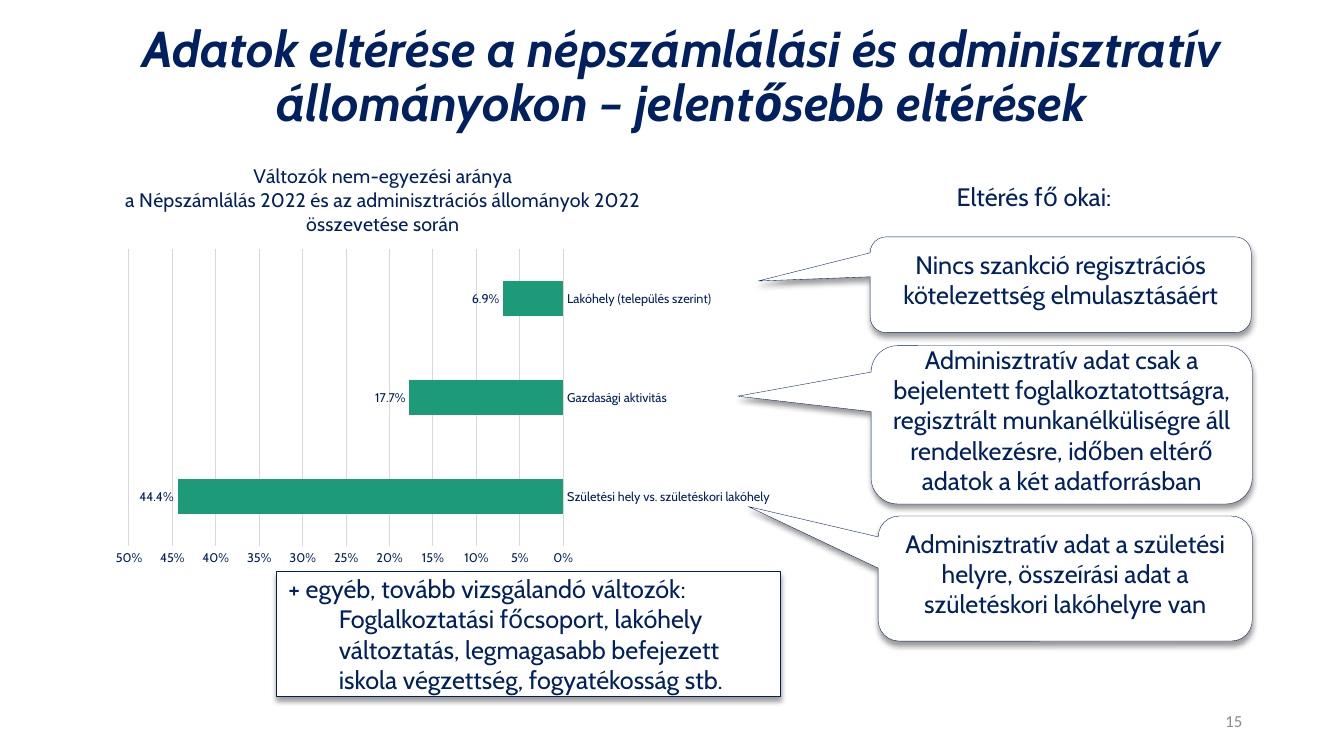
from dataclasses import dataclass

from lxml import etree
from pptx import Presentation
from pptx.chart.data import CategoryChartData
from pptx.dml.color import RGBColor
from pptx.enum.chart import XL_CHART_TYPE, XL_LABEL_POSITION, XL_TICK_MARK
from pptx.enum.shapes import MSO_SHAPE
from pptx.enum.text import MSO_ANCHOR, PP_ALIGN
from pptx.oxml import parse_xml
from pptx.oxml.ns import nsdecls, qn
from pptx.util import Pt

PX = 9144  # 100 px to the inch


@dataclass(frozen=True)
class Theme:
    navy: RGBColor = RGBColor(0x00, 0x20, 0x60)
    green: RGBColor = RGBColor(0x1D, 0x9A, 0x78)
    white: RGBColor = RGBColor(0xFF, 0xFF, 0xFF)
    grid: RGBColor = RGBColor(0xD9, 0xD9, 0xD9)
    gray: RGBColor = RGBColor(0x8C, 0x8C, 0x8C)
    font: str = "Cabin"
    number_font: str = "Calibri"
    title: int = 36
    body: int = 18
    chart_title: int = 14
    number: int = 12
    label: int = 9


theme = Theme()


def write(shape, lines, size, align, color=theme.navy, name=theme.font, insets=(10, 5, 10, 5)):
    """Fill a shape with one paragraph per line; insets are left, top, right, bottom."""
    frame = shape.text_frame
    frame.text = "\n".join(lines)
    frame.word_wrap = True
    frame.vertical_anchor = MSO_ANCHOR.MIDDLE
    frame.margin_left, frame.margin_top, frame.margin_right, frame.margin_bottom = (
        inset * PX for inset in insets)
    for paragraph in frame.paragraphs:
        paragraph.alignment = align
        for run in paragraph.runs:
            run.font.size = Pt(size)
            run.font.name = name
            run.font.color.rgb = color
    return frame


def add_card(slide, preset, box):
    """Add a white box with a thin navy outline and a soft shadow below it."""
    shape = slide.shapes.add_shape(preset, *(length * PX for length in box))
    shape.fill.solid()
    shape.fill.fore_color.rgb = theme.white
    shape.line.color.rgb = theme.navy
    shape.line.width = Pt(0.25)
    shape.shadow.inherit = False
    shape._element.spPr.find(qn("a:effectLst")).append(parse_xml(
        f'<a:outerShdw {nsdecls("a")} blurRad="{Pt(4)}" dist="{Pt(3)}" dir="5400000" rotWithShape="0">'
        '<a:srgbClr val="000000"><a:alpha val="40000"/></a:srgbClr></a:outerShdw>'))
    return shape


presentation = Presentation()
presentation.slide_width = 1333 * PX
presentation.slide_height = 750 * PX
slide = presentation.slides.add_slide(presentation.slide_layouts[6])

# Title and slide number
title = slide.shapes.add_textbox(101 * PX, 18 * PX, 1150 * PX, 119 * PX)
title_frame = write(
    title,
    ["Adatok eltérése a népszámlálási és adminisztratív állományokon – jelentősebb eltérések"],
    theme.title, PP_ALIGN.CENTER)
title_frame.paragraphs[0].line_spacing = 0.9
title_font = title_frame.paragraphs[0].runs[0].font
title_font.bold = title_font.italic = True

slide_number = slide.shapes.add_textbox(942 * PX, 695 * PX, 300 * PX, 40 * PX)
write(slide_number, ["15"], theme.number, PP_ALIGN.RIGHT, theme.gray, theme.number_font)

# Callouts with the reasons
callouts = [
    ((871, 512, 371, 124), (-0.847, -0.576),
     "Adminisztratív adat a születési helyre, összeírási adat a születéskori lakóhelyre van"),
    ((864, 343, 378, 157), (-0.85, -0.181),
     "Adminisztratív adat csak a bejelentett foglalkoztatottságra, regisztrált munkanélküliségre "
     "áll rendelkezésre, időben eltérő adatok a két adatforrásban"),
    ((863, 235, 378, 95), (-0.794, -0.039),
     "Nincs szankció regisztrációs kötelezettség elmulasztásáért"),
]
for box, tip, reason in callouts:
    callout = add_card(slide, MSO_SHAPE.ROUNDED_RECTANGULAR_CALLOUT, box)
    callout.adjustments[0], callout.adjustments[1] = tip
    write(callout, [reason], theme.body, PP_ALIGN.CENTER, insets=(1, 1, 1, 11))

# Further variables
further = add_card(slide, MSO_SHAPE.RECTANGLE, (274, 567, 500, 124))
further_frame = write(
    further,
    ["+ egyéb, tovább vizsgálandó változók:",
     "Foglalkoztatási főcsoport, lakóhely változtatás, legmagasabb befejezett iskola végzettség, "
     "fogyatékosság stb."],
    theme.body, PP_ALIGN.LEFT, insets=(12, 12, 12, 12))
further_frame.paragraphs[1].level = 1
indent = further_frame.paragraphs[1]._p.get_or_add_pPr()
indent.set("marL", str(50 * PX))
indent.set("indent", "0")

# Bar chart
chart_data = CategoryChartData(number_format="0.0%")
chart_data.categories = [
    "Születési hely vs. születéskori lakóhely", "Gazdasági aktivitás", "Lakóhely (település szerint)"]
chart_data.add_series("Series 1", (0.444, 0.177, 0.069))
chart = slide.shapes.add_chart(
    XL_CHART_TYPE.BAR_CLUSTERED, 101 * PX, 141 * PX, 673 * PX, 426 * PX, chart_data).chart
chart.has_legend = False
chart.font.size = Pt(theme.label)
chart.font.name = theme.font
chart.font.color.rgb = theme.navy

chart.has_title = True
chart_title_frame = chart.chart_title.text_frame
chart_title_frame.text = (
    "Változók nem-egyezési aránya\n"
    "a Népszámlálás 2022 és az adminisztrációs állományok 2022\n"
    "összevetése során")
for paragraph in chart_title_frame.paragraphs:
    paragraph.alignment = PP_ALIGN.CENTER
    font = paragraph.runs[0].font
    font.size = Pt(theme.chart_title)
    font.name = theme.font
    font.bold = False
    font.color.rgb = theme.navy

category_axis = chart.category_axis
category_axis.major_tick_mark = XL_TICK_MARK.NONE
category_axis.format.line.color.rgb = theme.grid
category_axis.format.line.width = Pt(0.75)

value_axis = chart.value_axis
value_axis.minimum_scale = 0
value_axis.maximum_scale = 0.5
value_axis.major_unit = 0.05
value_axis.reverse_order = True
value_axis.major_tick_mark = XL_TICK_MARK.NONE
value_axis.format.line.fill.background()
value_axis.major_gridlines.format.line.color.rgb = theme.grid
value_axis.major_gridlines.format.line.width = Pt(0.75)
value_axis.tick_labels.number_format = "0%"
value_axis.tick_labels.number_format_is_linked = False

plot = chart.plots[0]
plot.gap_width = 182
plot.vary_by_categories = False
bars = plot.series[0]
bars.format.fill.solid()
bars.format.fill.fore_color.rgb = theme.green
labels = bars.data_labels
labels.show_value = True
labels.number_format = "0.0%"
labels.number_format_is_linked = False
labels.position = XL_LABEL_POSITION.OUTSIDE_END
labels.font.size = Pt(theme.label)
labels.font.name = theme.font
labels.font.color.rgb = theme.navy

# Fixed places of the chart title and the plot area, as shares of the chart
layouts = [
    (chart.chart_title._element, {"xMode": "edge", "yMode": "edge", "x": 0.03, "y": 0.04}),
    (chart._chartSpace.chart.plotArea,
     {"layoutTarget": "inner", "xMode": "edge", "yMode": "edge",
      "x": 0.04, "y": 0.25, "w": 0.64, "h": 0.69}),
]
for element, settings in layouts:
    for old_layout in element.findall(qn("c:layout")):
        element.remove(old_layout)
    layout = etree.Element(qn("c:layout"))
    manual = etree.SubElement(layout, qn("c:manualLayout"))
    for tag, value in settings.items():
        etree.SubElement(manual, qn(f"c:{tag}")).set("val", str(value))
    text = element.find(qn("c:tx"))
    element.insert(0 if text is None else 1, layout)

# Heading above the callouts
heading = slide.shapes.add_textbox(939 * PX, 175 * PX, 187 * PX, 40 * PX)
write(heading, ["Eltérés fő okai:"], theme.body, PP_ALIGN.LEFT)

presentation.save("out.pptx")
